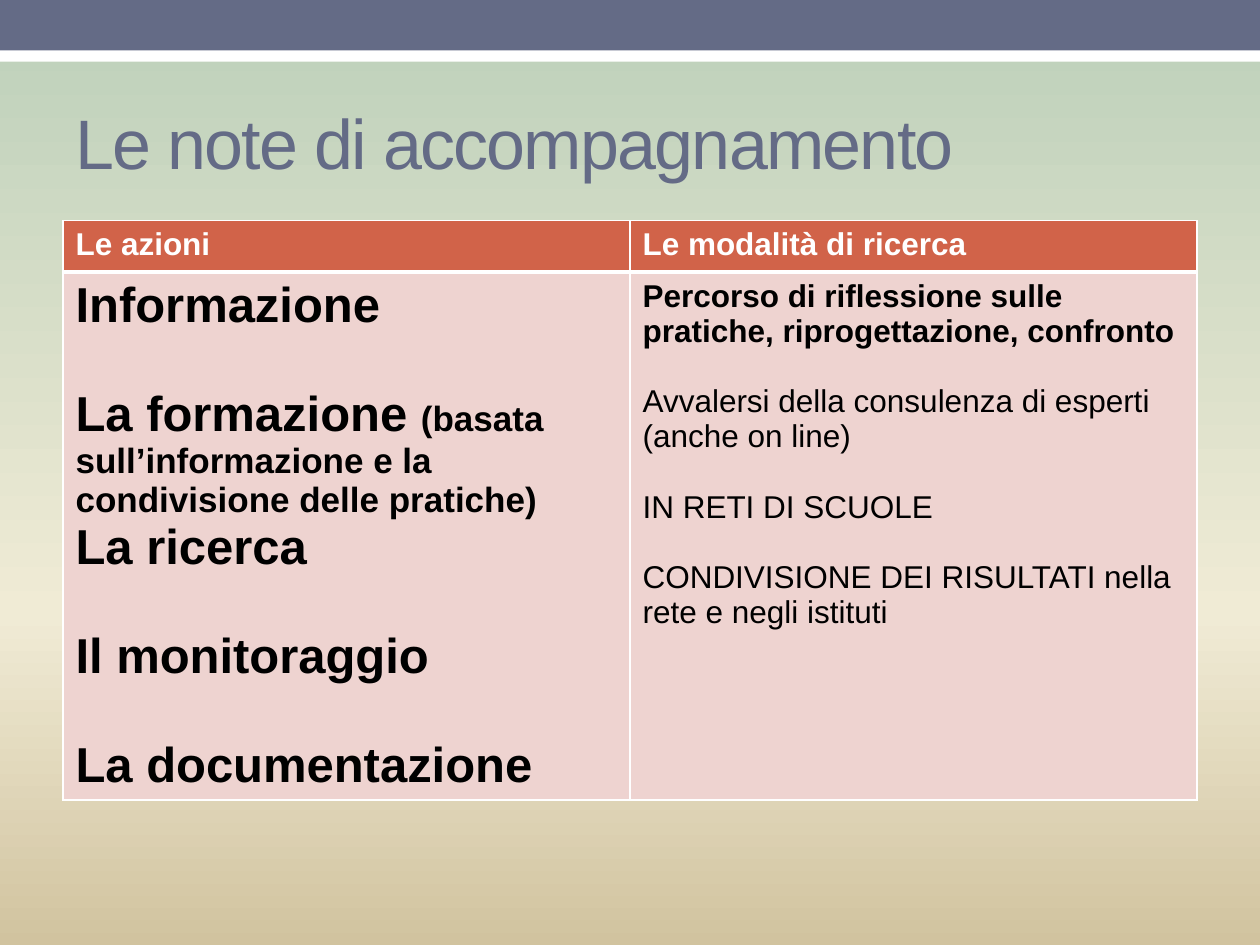
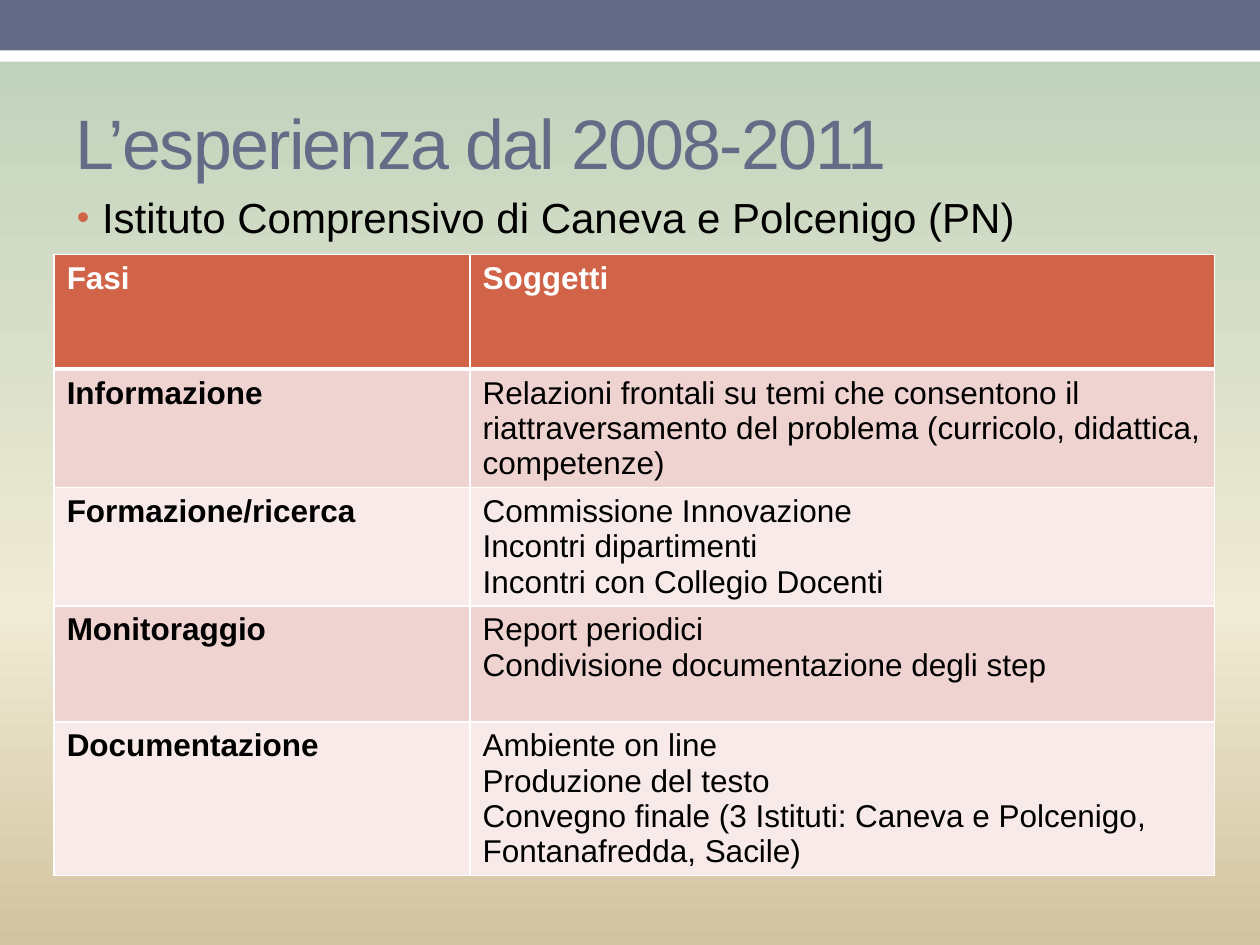
from dataclasses import dataclass

from lxml.etree import SubElement
from pptx import Presentation
from pptx.dml.color import RGBColor
from pptx.enum.shapes import MSO_SHAPE as SHAPE
from pptx.enum.text import MSO_ANCHOR as ANCHOR, PP_ALIGN as ALIGN
from pptx.oxml.ns import qn
from pptx.util import Inches, Pt

FONT = "Arial"
COLORS = {
    "slate": "646B86", "white": "FFFFFF", "black": "000000", "rust": "D16349",
    "rose": "EED3D0", "blush": "F7EAE9",
    "sky": "BCD0BA", "cream": "F0EBD5", "sand": "D1C39F",
}
BACKGROUND = [(0, "sky"), (65, "cream"), (100, "sand")]
LINE_HEIGHT = 1.12


@dataclass
class Run:
    text: str
    size: int = 18
    bold: bool = False


@dataclass
class Para:
    runs: list[Run]
    line_before: bool = False


@dataclass
class Band:
    top: float
    height: float
    color: str


@dataclass
class TableSpec:
    left: float
    top: float
    widths: list[float]
    heights: list[float]
    rows: list[list[list[Para]]]


BANDS = [Band(0.24, 0.25, "white"), Band(0, 0.4, "slate")]


def rgb(name: str) -> RGBColor:
    return RGBColor.from_string(COLORS[name])


def lines(*texts: str, size: int = 18, bold: bool = False) -> list[Para]:
    return [Para([Run(text, size, bold)]) for text in texts]


def spaced(*texts: str, size: int = 18, bold: bool = False) -> list[Para]:
    """Paragraphs that each stand one line below the text before them."""
    return [Para([Run(text, size, bold)], True) for text in texts]


def add_run(p, run: Run, color: str):
    r = p.add_run()
    r.text = run.text
    r.font.name, r.font.size, r.font.bold = FONT, Pt(run.size), run.bold
    r.font.color.rgb = rgb(color)
    return r


def place(sp, left: float, top: float, width: float, height: float) -> None:
    sp.left, sp.top = Inches(left), Inches(top)
    sp.width, sp.height = Inches(width), Inches(height)


def paint_background(master) -> None:
    fill = master.background.fill
    fill.gradient()
    fill.gradient_angle = 270
    stops = master.element.find(".//" + qn("a:gsLst"))
    for stop in list(stops):
        stops.remove(stop)
    for percent, color in BACKGROUND:
        stop = SubElement(stops, qn("a:gs"), pos=str(percent * 1000))
        SubElement(stop, qn("a:srgbClr"), val=COLORS[color])


def add_slide(prs, layout: int, title: str):
    """Add a slide with the shared bands and title style."""
    s = prs.slides.add_slide(prs.slide_layouts[layout])
    for band in BANDS:
        sp = s.shapes.add_shape(SHAPE.RECTANGLE, 0, Inches(band.top),
                                prs.slide_width, Inches(band.height))
        sp.shadow.inherit = False
        sp.fill.solid()
        sp.fill.fore_color.rgb = rgb(band.color)
        sp.line.fill.background()
    place(s.shapes.title, 0.5, 0.58, 9, 1.08)
    tf = s.shapes.title.text_frame
    tf.vertical_anchor = ANCHOR.MIDDLE
    p = tf.paragraphs[0]
    p.alignment = ALIGN.LEFT
    r = add_run(p, Run(title, 40), "slate")
    r.font._element.set("spc", "-100")
    return s


def add_bullet(sp, run: Run) -> None:
    p = sp.text_frame.paragraphs[0]
    add_run(p, run, "black")
    props = p._p.get_or_add_pPr()
    props.set("marL", str(Inches(0.2)))
    props.set("indent", str(Inches(-0.2)))
    SubElement(SubElement(props, qn("a:buClr")), qn("a:srgbClr"), val=COLORS["rust"])
    SubElement(props, qn("a:buSzPct"), val="85000")
    SubElement(props, qn("a:buFont"), typeface=FONT)
    SubElement(props, qn("a:buChar"), char="•")


def set_borders(cell, top: int, bottom: int) -> None:
    props = cell._tc.get_or_add_tcPr()
    widths = {"lnL": 1, "lnR": 1, "lnT": top, "lnB": bottom}
    for i, (side, width) in enumerate(widths.items()):
        line = SubElement(props, qn(f"a:{side}"), w=str(Pt(width)))
        SubElement(SubElement(line, qn("a:solidFill")), qn("a:srgbClr"),
                   val=COLORS["white"])
        props.insert(i, line)


def fill_cell(cell, paras: list[Para], fill: str, color: str) -> None:
    cell.fill.solid()
    cell.fill.fore_color.rgb = rgb(fill)
    tf = cell.text_frame
    for i, para in enumerate(paras):
        p = tf.add_paragraph() if i else tf.paragraphs[0]
        if para.line_before:
            p.space_before = Pt(round(para.runs[0].size * LINE_HEIGHT))
        for run in para.runs:
            add_run(p, run, color)


def add_table(s, spec: TableSpec) -> None:
    table = s.shapes.add_table(
        len(spec.heights), len(spec.widths), Inches(spec.left), Inches(spec.top),
        Inches(sum(spec.widths)), Inches(sum(spec.heights))).table
    for column, width in zip(table.columns, spec.widths):
        column.width = Inches(width)
    for i, (row, height, texts) in enumerate(zip(table.rows, spec.heights, spec.rows)):
        row.height = Inches(height)
        banding = "rose" if i % 2 else "blush"
        fill, color = (banding, "black") if i else ("rust", "white")
        for cell, paras in zip(row.cells, texts):
            fill_cell(cell, paras, fill, color)
            set_borders(cell, top=3 if i == 1 else 1, bottom=1 if i else 3)


ACTIONS = TableSpec(0.5, 1.75, [4.5, 4.5], [0.41, 4.19], [
    [lines("Le azioni", bold=True), lines("Le modalità di ricerca", bold=True)],
    [
        [
            *lines("Informazione", size=28, bold=True),
            Para([Run("La formazione ", 28, True),
                  Run("(basata sull’informazione e la condivisione delle pratiche)",
                      20, True)], True),
            *lines("La ricerca", size=28, bold=True),
            *spaced("Il monitoraggio", "La documentazione", size=28, bold=True),
        ],
        [
            *lines("Percorso di riflessione sulle pratiche, riprogettazione, confronto",
                   bold=True),
            *spaced("Avvalersi della consulenza di esperti (anche on line)",
                    "IN RETI DI SCUOLE",
                    "CONDIVISIONE DEI RISULTATI nella rete e negli istituti"),
        ],
    ],
])

PHASES = TableSpec(0.43, 2.02, [3.3, 5.91], [0.91, 0.93, 0.94, 0.92, 1.22], [
    [lines("Fasi", bold=True), lines("Soggetti", bold=True)],
    [lines("Informazione", bold=True),
     lines("Relazioni frontali su temi che consentono il riattraversamento "
           "del problema (curricolo, didattica, competenze)")],
    [lines("Formazione/ricerca", bold=True),
     lines("Commissione Innovazione", "Incontri dipartimenti",
           "Incontri con Collegio Docenti")],
    [lines("Monitoraggio", bold=True),
     lines("Report periodici", "Condivisione documentazione degli step")],
    [lines("Documentazione", bold=True),
     lines("Ambiente on line", "Produzione del testo",
           "Convegno finale (3 Istituti: Caneva e Polcenigo, Fontanafredda, Sacile)")],
])


def main() -> None:
    prs = Presentation()
    prs.slide_width, prs.slide_height = Inches(10), Inches(7.5)
    paint_background(prs.slide_master)

    s = add_slide(prs, 5, "Le note di accompagnamento")
    add_table(s, ACTIONS)

    s = add_slide(prs, 1, "L’esperienza dal 2008-2011")
    body = s.placeholders[1]
    place(body, 0.51, 1.47, 9, 5.33)
    add_bullet(body, Run("Istituto Comprensivo di Caneva e Polcenigo (PN)", 24))
    add_table(s, PHASES)

    prs.save("out.pptx")


if __name__ == "__main__":
    main()
